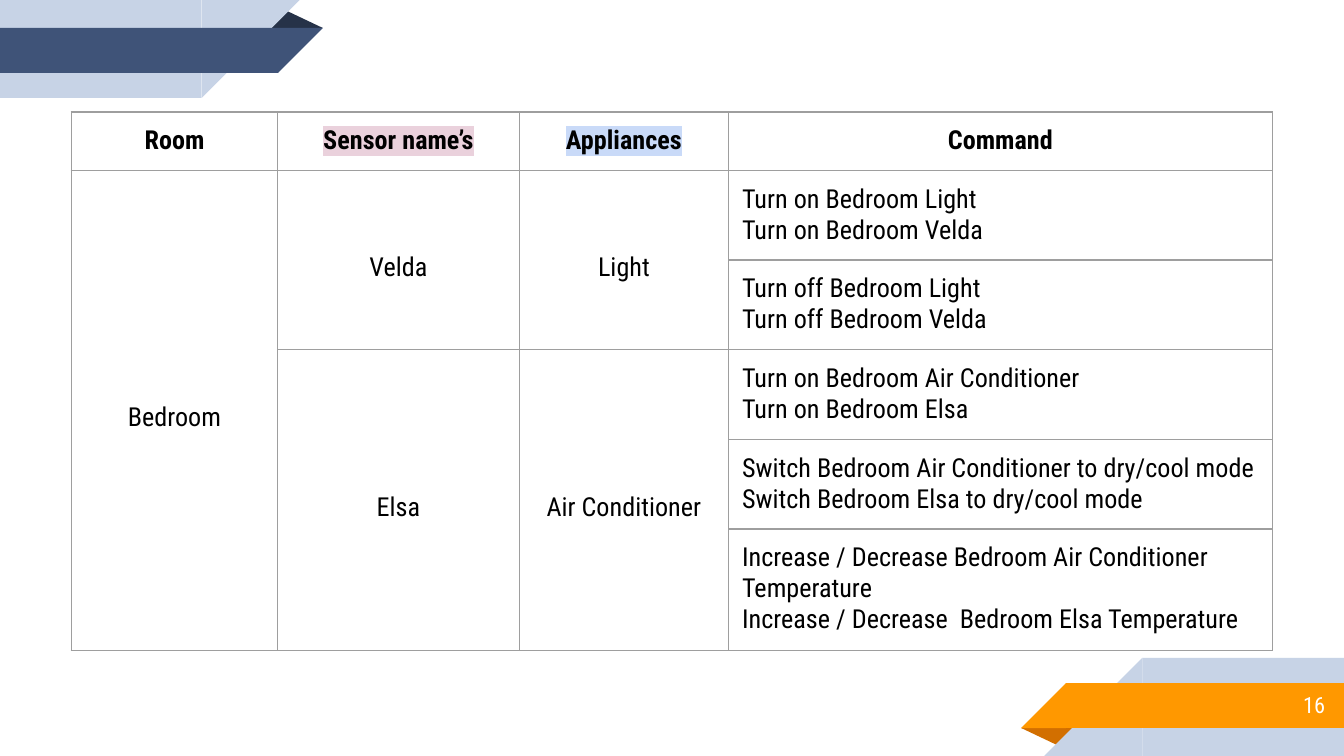
from lxml import etree
from pptx import Presentation, util as u
from pptx.dml.color import RGBColor
from pptx.enum import shapes, text
from pptx.oxml.ns import qn

FONT = "Roboto Condensed"
BLACK = RGBColor(0x00, 0x00, 0x00)
WHITE = RGBColor(0xFF, 0xFF, 0xFF)
PALE_BLUE = RGBColor(0xC7, 0xD3, 0xE6)
ORANGE = RGBColor(0xFF, 0x98, 0x00)
DARK_ORANGE = RGBColor(0xD2, 0x6F, 0x00)
NAVY = RGBColor(0x3F, 0x53, 0x78)
DARK_NAVY = RGBColor(0x26, 0x32, 0x48)
GREY = RGBColor(0x9E, 0x9E, 0x9E)
PINK_MARK = RGBColor(0xEA, 0xD1, 0xDC)
BLUE_MARK = RGBColor(0xC9, 0xDA, 0xF8)

CENTER = text.PP_ALIGN.CENTER
MIDDLE = text.MSO_ANCHOR.MIDDLE
INSETS = {f"margin_{side}": u.Pt(7.2) for side in ("left", "top", "right", "bottom")}

COLUMNS = [110.6, 129.4, 112.2, 291.2]
ROWS = [30.5, 47.6, 47.6, 47.6, 47.6, 63.8]
HEADERS = [("Room", None), ("Sensor name’s", PINK_MARK),
           ("Appliances", BLUE_MARK), ("Command", None)]
SPANS = [(1, 0, 5, "Bedroom"), (1, 1, 2, "Velda"), (1, 2, 2, "Light"),
         (3, 1, 3, "Elsa"), (3, 2, 3, "Air Conditioner")]
COMMANDS = [
    ["Turn on Bedroom Light", "Turn on Bedroom Velda"],
    ["Turn off Bedroom Light", "Turn off Bedroom Velda"],
    ["Turn on Bedroom Air Conditioner", "Turn on Bedroom Elsa"],
    ["Switch Bedroom Air Conditioner to dry/cool mode",
     "Switch Bedroom Elsa to dry/cool mode"],
    ["Increase / Decrease Bedroom Air Conditioner Temperature",
     "Increase / Decrease  Bedroom Elsa Temperature"],
]


def apply(obj, fmt):
    for name, value in fmt.items():
        setattr(obj, name, value)


def write(tf, lines, size, color, bold=False, mark=None, **para):
    for i, line in enumerate(lines):
        p = tf.paragraphs[0] if i == 0 else tf.add_paragraph()
        apply(p, para)
        r = p.add_run()
        r.text = line
        apply(r.font, {"name": FONT, "size": u.Pt(size), "bold": bold})
        r.font.color.rgb = color
        if mark is not None:
            hl = etree.Element(qn("a:highlight"))
            etree.SubElement(hl, qn("a:srgbClr"), val=str(mark))
            r.font._element.find(qn("a:latin")).addprevious(hl)


def ribbon(s, box, band, fold, turned):
    x, y, w, h = box
    kinds = shapes.MSO_SHAPE
    parts = [
        (kinds.ISOSCELES_TRIANGLE, 0, 37.5, 31, 10, fold),
        (kinds.RECTANGLE, 65, 0, w - 65, h, PALE_BLUE),
        (kinds.RIGHT_TRIANGLE, 65 - h, 0, h, h, PALE_BLUE),
        (kinds.RECTANGLE, 24, 13.5, w - 24, 24, band),
        (kinds.RIGHT_TRIANGLE, 0, 13.5, 24, 24, band),
    ]
    for kind, px, py, pw, ph, color in parts:
        if turned:
            px, py = w - px - pw, h - py - ph
        sp = s.shapes.add_shape(kind, u.Pt(x + px), u.Pt(y + py), u.Pt(pw), u.Pt(ph))
        sp.shadow.inherit = False
        sp.fill.solid()
        sp.fill.fore_color.rgb = color
        sp.line.fill.background()
        if kind == kinds.ISOSCELES_TRIANGLE:
            sp.adjustments[0] = 0.32
            sp.rotation = 0 if turned else 180
        elif kind == kinds.RIGHT_TRIANGLE:
            sp._element.spPr.xfrm.set("flipH", "1")
            sp.rotation = 180 if turned else 0


def page_number(s, box, number):
    tf = s.shapes.add_textbox(*map(u.Pt, box)).text_frame
    apply(tf, {"word_wrap": True, "vertical_anchor": MIDDLE, **INSETS})
    write(tf, [number], 12, WHITE, alignment=text.PP_ALIGN.RIGHT)


def style_cell(cell):
    apply(cell, INSETS)
    cell.fill.background()
    tcPr = cell._tc.get_or_add_tcPr()
    for i, side in enumerate(("a:lnL", "a:lnR", "a:lnT", "a:lnB")):
        ln = etree.Element(qn(side), w=str(u.Pt(0.75)))
        fill = etree.SubElement(ln, qn("a:solidFill"))
        etree.SubElement(fill, qn("a:srgbClr"), val=str(GREY))
        tcPr.insert(i, ln)


def command_table(s, box):
    frame = s.shapes.add_table(len(ROWS), len(COLUMNS), *map(u.Pt, box))
    table = frame.table
    apply(table, {"first_row": False, "horz_banding": False})
    for column, width in zip(table.columns, COLUMNS):
        column.width = u.Pt(width)
    for row, height in zip(table.rows, ROWS):
        row.height = u.Pt(height)
        for cell in row.cells:
            style_cell(cell)
    for col, (label, mark) in enumerate(HEADERS):
        write(table.cell(0, col).text_frame, [label], 14, BLACK, True, mark,
              alignment=CENTER)
    for row, col, count, label in SPANS:
        cell = table.cell(row, col)
        cell.merge(table.cell(row + count - 1, col))
        cell.vertical_anchor = MIDDLE
        write(cell.text_frame, [label], 14, BLACK, alignment=CENTER, line_spacing=1.5)
    for row, lines in enumerate(COMMANDS, 1):
        write(table.cell(row, 3).text_frame, lines, 14, BLACK)


def main():
    prs = Presentation()
    apply(prs, {"slide_width": u.Pt(720), "slide_height": u.Pt(405)})
    s = prs.slides.add_slide(prs.slide_layouts[6])
    ribbon(s, (547, 352.5, 173, 52.5), ORANGE, DARK_ORANGE, False)
    ribbon(s, (0, 0, 173, 52.5), NAVY, DARK_NAVY, True)
    page_number(s, (600, 365, 117, 25), "16")
    command_table(s, (38.2, 60, sum(COLUMNS), sum(ROWS)))
    prs.save("out.pptx")


if __name__ == "__main__":
    main()
